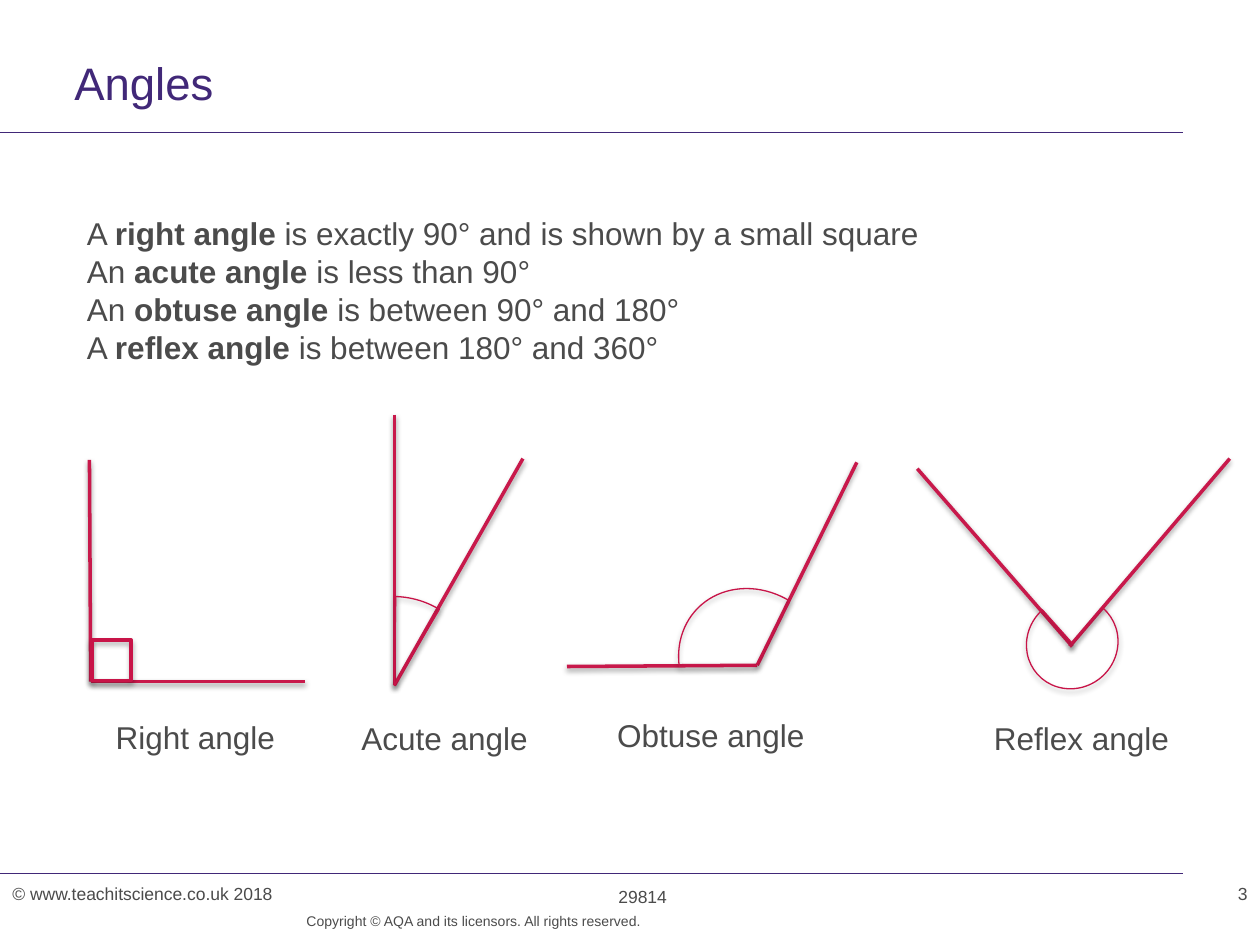
from pptx import Presentation
from pptx.dml.color import RGBColor
from pptx.enum.shapes import MSO_CONNECTOR, MSO_SHAPE
from pptx.enum.text import MSO_ANCHOR, MSO_AUTO_SIZE, PP_ALIGN
from pptx.oxml import parse_xml
from pptx.oxml.ns import nsdecls
from pptx.util import Inches, Pt

PURPLE, GREY, CRIMSON, ROSE = "412878", "4B4B4B", "C8194B", "C81448"


def color(hex_string):
    return RGBColor.from_string(hex_string)


def set_effects(shape, alpha=None, distance=0):
    """Give the shape a soft downward shadow, or none without alpha."""
    shadow = "" if alpha is None else (
        f'<a:outerShdw blurRad="{Pt(3.1)}" dist="{Pt(distance)}" dir="5400000" rotWithShape="0">'
        f'<a:srgbClr val="000000"><a:alpha val="{alpha * 1000}"/></a:srgbClr></a:outerShdw>')
    shape._element.spPr.append(
        parse_xml(f'<a:effectLst {nsdecls("a")}>{shadow}</a:effectLst>'))


class AngleSlide:
    font_name = "Arial"

    def __init__(self, presentation):
        self.slide = presentation.slides.add_slide(presentation.slide_layouts[1])

    def place(self, shape, box):
        shape.left, shape.top, shape.width, shape.height = map(Inches, box)

    def style(self, paragraph, size, hex_string, align=PP_ALIGN.LEFT):
        paragraph.alignment = align
        for run in paragraph.runs:
            run.font.name = self.font_name
            run.font.size = Pt(size)
            run.font.color.rgb = color(hex_string)

    def title(self, text, box):
        shape = self.slide.shapes.title
        self.place(shape, box)
        frame = shape.text_frame
        frame.text = text
        frame.auto_size = MSO_AUTO_SIZE.NONE
        frame.vertical_anchor = MSO_ANCHOR.TOP
        frame.margin_left = frame.margin_top = frame.margin_bottom = 0
        frame.paragraphs[0].line_spacing = Pt(28)
        self.style(frame.paragraphs[0], 26, PURPLE)

    def definitions(self, rows, box):
        shape = self.slide.placeholders[1]
        self.place(shape, box)
        frame = shape.text_frame
        frame.auto_size = MSO_AUTO_SIZE.NONE
        frame.word_wrap = False
        for index, parts in enumerate(rows):
            paragraph = frame.add_paragraph() if index else frame.paragraphs[0]
            properties = paragraph._p.get_or_add_pPr()
            properties.set("marL", "0")
            properties.set("indent", "0")
            properties.append(parse_xml(f'<a:buNone {nsdecls("a")}/>'))
            paragraph.space_before = Pt(0)
            for position, part in enumerate(parts):
                run = paragraph.add_run()
                run.text = part
                run.font.bold = position == 1
            self.style(paragraph, 18, GREY)

    def text(self, text, box, size=10, align=PP_ALIGN.LEFT, wrap=True):
        shape = self.slide.shapes.add_textbox(*map(Inches, box))
        frame = shape.text_frame
        frame.word_wrap = wrap
        frame.text = text
        self.style(frame.paragraphs[0], size, GREY, align)
        return frame

    def line(self, shapes, start, end, hex_string, width):
        connector = shapes.add_connector(
            MSO_CONNECTOR.STRAIGHT, *map(Inches, (*start, *end)))
        connector.line.color.rgb = color(hex_string)
        connector.line.width = Pt(width)
        return connector

    def rule(self, top):
        set_effects(self.line(self.slide.shapes, (0, top), (9.39, top), PURPLE, 0.6))

    def angle(self, arms, marker, box, width, rotation=0, adjustments=()):
        """Group the two arms of an angle with the marker at its vertex."""
        shapes = self.slide.shapes.add_group_shape().shapes
        for start, end in arms:
            set_effects(self.line(shapes, start, end, CRIMSON, 2), 38, 1.6)
        shape = shapes.add_shape(marker, *map(Inches, box))
        shape.rotation = rotation
        for index, value in enumerate(adjustments):
            shape.adjustments[index] = value
        shape.fill.background()
        shape.line.color.rgb = color(ROSE)
        shape.line.width = Pt(width)
        set_effects(shape, 35, 1.8)


def main():
    presentation = Presentation()
    presentation.slide_width, presentation.slide_height = Inches(10), Inches(7.5)
    page = AngleSlide(presentation)

    page.rule(1.05)
    page.rule(6.93)
    page.title("Angles", (0.59, 0.48, 8.8, 0.47))
    page.definitions([
        ("A ", "right angle ", "is exactly 90° and is shown by a small square"),
        ("An ", "acute angle ", "is less than 90°"),
        ("An ", "obtuse angle ", "is between 90° and 180°"),
        ("A ", "reflex angle", " is between 180° and 360°"),
    ], (0.59, 1.65, 7.01, 1.31))

    page.angle([((0.71, 3.65), (0.72, 5.41)), ((2.42, 5.41), (0.72, 5.41))],
               MSO_SHAPE.RECTANGLE, (0.73, 5.08, 0.31, 0.32), 2)
    page.angle([((3.13, 3.29), (3.13, 5.44)), ((3.13, 5.44), (4.15, 3.64))],
               MSO_SHAPE.PIE, (2.42, 4.74, 1.42, 1.4), 0.75, 48.8, (133.24, 151.07))
    page.angle([((4.5, 5.29), (6.01, 5.28)), ((6.01, 5.28), (6.8, 3.67))],
               MSO_SHAPE.PIE, (5.35, 4.71, 1.3, 1.15), 0.75, 44.9, (80.92, 151.5))
    page.angle([((7.28, 3.72), (8.51, 5.13)), ((9.76, 3.64), (8.49, 5.13))],
               MSO_SHAPE.PIE, (8.14, 4.75, 0.74, 0.71), 0.75, 318.2, (211.07, 162))

    for label, left, top, width in [
        ("Right angle", 0.82, 5.65, 1.48),
        ("Acute angle", 2.77, 5.66, 1.53),
        ("Obtuse angle", 4.8, 5.63, 1.7),
        ("Reflex angle", 7.79, 5.66, 1.6),
    ]:
        page.text(label, (left, top, width, 0.4), size=18, wrap=False)

    page.text("© www.teachitscience.co.uk 2018", (0, 6.96, 3.82, 0.27))
    page.text("29814", (3.19, 6.98, 3.82, 0.27), align=PP_ALIGN.CENTER)
    page.text("3", (6.18, 6.96, 3.82, 0.27), align=PP_ALIGN.RIGHT)
    rights = page.text("Copyright © AQA and its licensors. All rights reserved.",
                       (2.16, 7.24, 2.93, 0.26), size=8, align=PP_ALIGN.RIGHT)
    rights.margin_left = rights.margin_right = rights.margin_top = rights.margin_bottom = 0
    rights.paragraphs[0].line_spacing = Pt(10)

    presentation.save("out.pptx")


if __name__ == "__main__":
    main()
